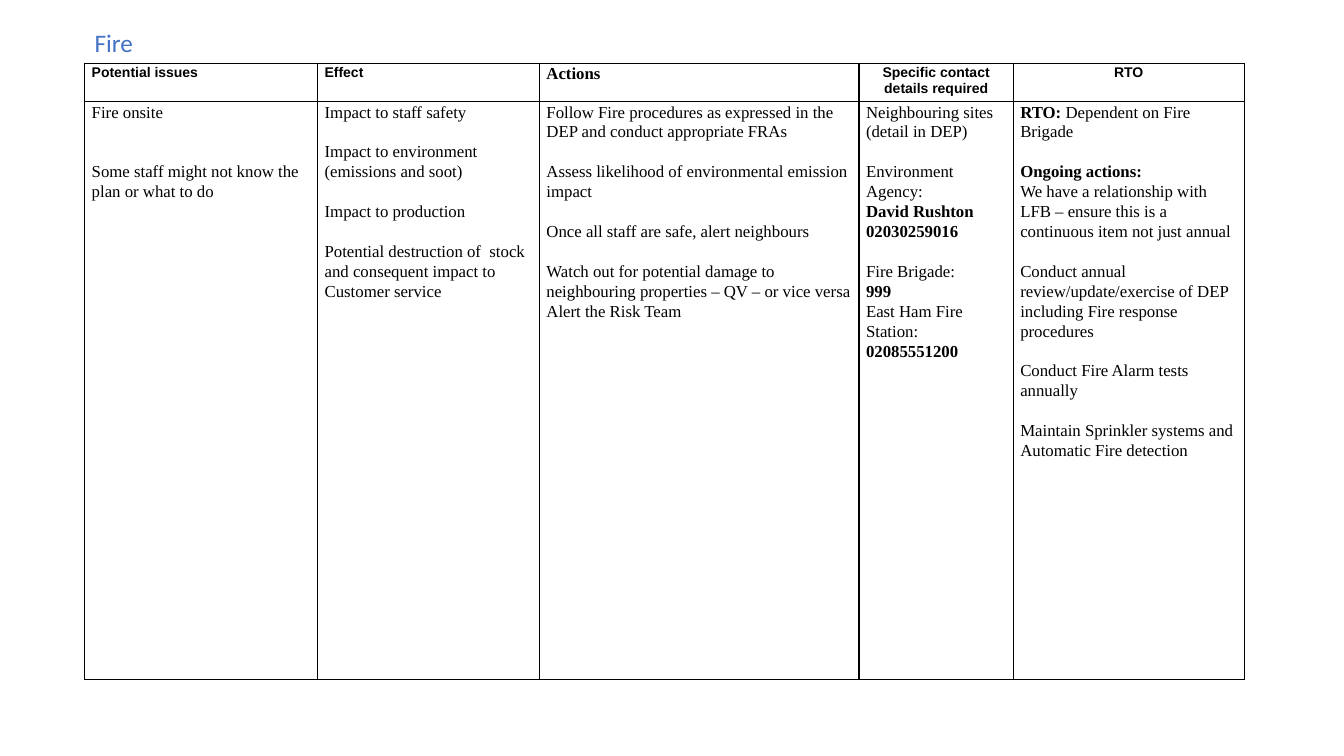
import pptx
import pptx.dml.color
import pptx.enum.text
import pptx.util
from lxml import etree
from pptx.oxml.ns import qn

SLIDE_WIDTH, SLIDE_HEIGHT = 13.33, 7.5
LEFT, TABLE_TOP = 0.84, 0.63
COLUMNS = (2.31, 2.2, 3.17, 1.53, 2.29)
ROWS = (0.38, 5.73)
BLACK, BLUE = "000000", "4472C4"
LINE_SPACING = 1.07
BLANK_LINE = 14.2
PLAIN, BOLD = False, True

HEADINGS = (
    ("Potential issues", "Arial", 10, "LEFT"),
    ("Effect", "Arial", 10, "LEFT"),
    ("Actions", "Times New Roman", 12, "LEFT"),
    ("Specific contact details required", "Arial", 10, "CENTER"),
    ("RTO", "Arial", 10, "CENTER"),
)

# Each paragraph: blank lines above it, then its (text, weight) runs.
FIRE_PLAN = (
    (
        (0, ("Fire onsite", PLAIN)),
        (2, ("Some staff might not know the plan or what to do", PLAIN)),
    ),
    (
        (0, ("Impact to staff safety", PLAIN)),
        (1, ("Impact to environment (emissions and soot)", PLAIN)),
        (1, ("Impact to production", PLAIN)),
        (1, ("Potential destruction of  stock and consequent impact to Customer service", PLAIN)),
    ),
    (
        (0, ("Follow Fire procedures as expressed in the DEP and conduct appropriate FRAs", PLAIN)),
        (1, ("Assess likelihood of environmental emission impact", PLAIN)),
        (1, ("Once all staff are safe, alert neighbours", PLAIN)),
        (1, ("Watch out for potential damage to neighbouring properties – QV – or vice versa", PLAIN)),
        (0, ("Alert the Risk Team", PLAIN)),
    ),
    (
        (0, ("Neighbouring sites (detail in DEP)", PLAIN)),
        (1, ("Environment Agency:", PLAIN)),
        (0, ("David Rushton", BOLD)),
        (0, ("02030259016", BOLD)),
        (1, ("Fire Brigade:", PLAIN)),
        (0, ("999", BOLD)),
        (0, ("East Ham Fire Station:", PLAIN)),
        (0, ("02085551200", BOLD)),
    ),
    (
        (0, ("RTO: ", BOLD), ("Dependent on Fire Brigade", PLAIN)),
        (1, ("Ongoing actions:", BOLD)),
        (0, ("We have a relationship with LFB – ensure this is a continuous item not just annual", PLAIN)),
        (1, ("Conduct annual review/update/exercise of DEP including Fire response procedures", PLAIN)),
        (1, ("Conduct Fire Alarm tests annually", PLAIN)),
        (1, ("Maintain Sprinkler systems and Automatic Fire detection", PLAIN)),
    ),
)


def color(value):
    """Turn a hex string into a colour."""
    return pptx.dml.color.RGBColor.from_string(value)


def add_span(para, text, font, size, hue=BLACK, bold=PLAIN):
    """Append one formatted run to a paragraph."""
    span = para.add_run()
    span.text = text
    span.font.name = font
    span.font.size = pptx.util.Pt(size)
    span.font.bold = bold
    span.font.color.rgb = color(hue)


def add_title(page, text):
    """Place the heading above the table."""
    box = page.shapes.add_textbox(
        *map(pptx.util.Inches, (LEFT, 0.22, SLIDE_WIDTH / 2, 0.4)))
    box.text_frame.word_wrap = True
    add_span(box.text_frame.paragraphs[0], text, "Calibri", 18, BLUE)


def style_cell(cell):
    """Give a cell its margins, clear fill and four black borders."""
    cell.margin_left = cell.margin_right = pptx.util.Inches(0.07)
    cell.margin_top = cell.margin_bottom = 0
    cell.fill.background()
    properties = cell.fill._xPr
    for index, side in enumerate(("lnL", "lnR", "lnT", "lnB")):
        line = etree.Element(qn("a:" + side), w=str(pptx.util.Pt(1)))
        fill = etree.SubElement(line, qn("a:solidFill"))
        etree.SubElement(fill, qn("a:srgbClr"), val=BLACK)
        properties.insert(index, line)


def fill_cell(cell, paragraphs, font, size, align="LEFT"):
    """Write paragraphs into a styled cell."""
    style_cell(cell)
    frame = cell.text_frame
    for index, (blank_lines, *spans) in enumerate(paragraphs):
        para = frame.add_paragraph() if index else frame.paragraphs[0]
        para.alignment = getattr(pptx.enum.text.PP_ALIGN, align)
        para.line_spacing = LINE_SPACING
        para.space_before = pptx.util.Pt(blank_lines * BLANK_LINE)
        for text, bold in spans:
            add_span(para, text, font, size, bold=bold)


def add_plan_table(page):
    """Build the table of headings and fire plan details."""
    area = map(pptx.util.Inches, (LEFT, TABLE_TOP, sum(COLUMNS), sum(ROWS)))
    table = page.shapes.add_table(len(ROWS), len(COLUMNS), *area).table
    table.first_row = table.horz_banding = False
    for row, height in zip(table.rows, ROWS):
        row.height = pptx.util.Inches(height)
    for index, width in enumerate(COLUMNS):
        table.columns[index].width = pptx.util.Inches(width)
        heading, font, size, align = HEADINGS[index]
        fill_cell(table.cell(0, index), [(0, (heading, BOLD))], font, size, align)
        fill_cell(table.cell(1, index), FIRE_PLAN[index], "Times New Roman", 12)


def main():
    """Create and save the fire plan slide."""
    deck = pptx.Presentation()
    deck.slide_width = pptx.util.Inches(SLIDE_WIDTH)
    deck.slide_height = pptx.util.Inches(SLIDE_HEIGHT)
    page = deck.slides.add_slide(deck.slide_layouts[6])
    add_plan_table(page)
    add_title(page, "Fire")
    deck.save("out.pptx")


if __name__ == "__main__":
    main()
